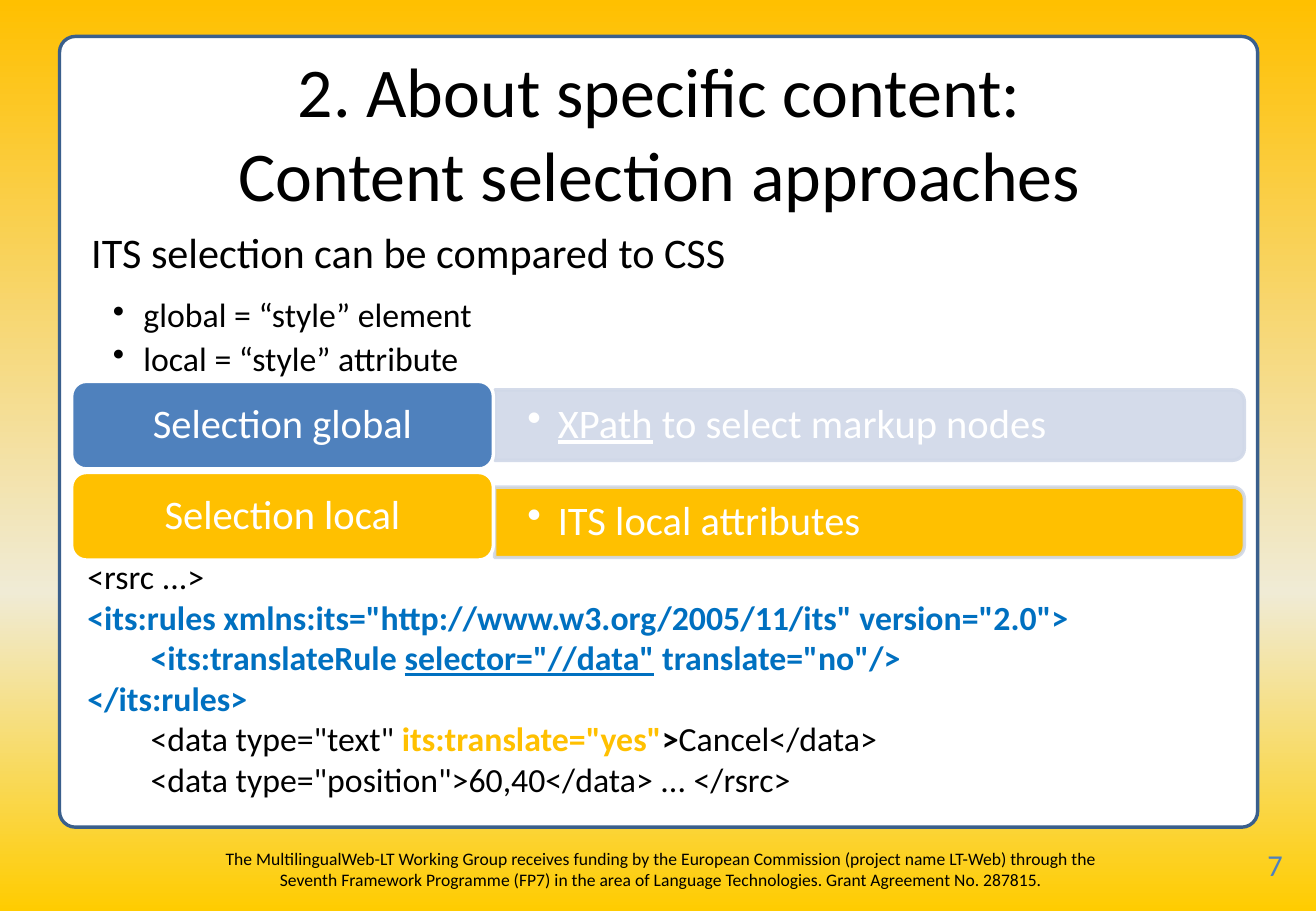
from copy import deepcopy
from dataclasses import dataclass

from pptx import Presentation
from pptx.dml.color import RGBColor
from pptx.enum.shapes import MSO_SHAPE as SHAPE
from pptx.enum.text import MSO_ANCHOR as ANCHOR, MSO_AUTO_SIZE as AUTO_SIZE, PP_ALIGN as ALIGN
from pptx.oxml.ns import qn
from pptx.oxml.xmlchemy import OxmlElement
from pptx.util import Inches, Pt

BLACK, WHITE = "000000", "FFFFFF"
BLUE, GOLD, PALE, CODE_BLUE = "4F81BD", "FFC000", "D0D8E8", "0070C0"


@dataclass
class Run:
    text: str
    color: str = BLACK
    bold: bool = False
    underline: bool = False


@dataclass
class Para:
    runs: list[Run]
    indent: float = 0
    bullet: bool = False
    align: ALIGN = ALIGN.LEFT
    spacing: float | None = None
    after: float = 0


@dataclass
class Row:
    label: str
    label_top: float
    label_fill: str
    bar_mid: float
    bar_fill: str
    bar_alpha: int
    runs: list[Run]


def rgb(color: str) -> RGBColor:
    return RGBColor.from_string(color)


def set_alpha(fill, percent: int) -> None:
    """Make the solid colour of a fill partly transparent."""
    color = fill._xPr.find(qn("a:solidFill"))[0]
    alpha = OxmlElement("a:alpha")
    alpha.set("val", str(percent * 1000))
    color.append(alpha)


def add_box(s, kind: SHAPE, at: tuple, fill: str | None, line: str, width: float):
    sp = s.shapes.add_shape(kind, *map(Inches, at))
    sp.shadow.inherit = False
    if fill:
        sp.fill.solid()
        sp.fill.fore_color.rgb = rgb(fill)
    else:
        sp.fill.background()
    sp.line.color.rgb = rgb(line)
    sp.line.width = Pt(width)
    return sp


def write(sp, paras: list[Para], size: float, anchor: ANCHOR = ANCHOR.TOP,
          inset: tuple = (0.1, 0.05)) -> None:
    tf = sp.text_frame
    tf.word_wrap = True
    tf.auto_size = AUTO_SIZE.NONE
    tf.vertical_anchor = anchor
    tf.margin_left = tf.margin_right = Inches(inset[0])
    tf.margin_top = tf.margin_bottom = Inches(inset[1])
    for i, para in enumerate(paras):
        p = tf.add_paragraph() if i else tf.paragraphs[0]
        p.alignment = para.align
        p.space_before = Pt(0)
        p.space_after = Pt(para.after)
        if para.spacing:
            p.line_spacing = para.spacing
        if para.indent:
            p.level = 1
            pPr = p._p.get_or_add_pPr()
            pPr.set("marL", str(Inches(para.indent)))
            pPr.set("indent", str(-Inches(para.indent) if para.bullet else 0))
            if para.bullet:
                bullet = OxmlElement("a:buChar")
                bullet.set("char", "•")
                pPr.append(bullet)
        for j, run in enumerate(para.runs):
            # Title lines are parted by a line break
            if run.text == "\n":
                p.add_line_break()
                continue
            r = p.add_run()
            r.text = run.text
            r.font.name = "Calibri"
            r.font.size = Pt(size)
            r.font.bold = run.bold
            r.font.underline = run.underline
            r.font.color.rgb = rgb(run.color)


def add_text(s, at: tuple, paras: list[Para], size: float, **layout) -> None:
    write(s.shapes.add_textbox(*map(Inches, at)), paras, size, **layout)


def set_background(s, stops: list[tuple[int, str]]) -> None:
    fill = s.background.fill
    fill.gradient()
    fill.gradient_angle = 270
    gsLst = s.element.find(".//" + qn("a:gsLst"))
    gsLst.append(deepcopy(gsLst[-1]))
    for stop, (position, color) in zip(fill.gradient_stops, stops):
        stop.color.rgb = rgb(color)
        stop.position = position / 100


def bullet(*runs: Run, after: float = 0) -> Para:
    return Para(list(runs), indent=0.25, bullet=True, spacing=0.9, after=after)


def add_row(s, row: Row) -> None:
    """Draw a bar rounded on its right, with its label on the left."""
    left, length, thick = 4.07, 6.17, 0.58
    at = (left + (length - thick) / 2, row.bar_mid - length / 2, thick, length)
    bar = add_box(s, SHAPE.ROUND_2_SAME_RECTANGLE, at, row.bar_fill, PALE, 2)
    bar.rotation = 90
    set_alpha(bar.fill, row.bar_alpha)
    set_alpha(bar.line.fill, 90)
    add_text(s, (left, row.bar_mid - 0.26, 6.15, 0.52), [bullet(*row.runs)], 24,
             anchor=ANCHOR.MIDDLE, inset=(0.27, 0.14))
    label = add_box(s, SHAPE.ROUNDED_RECTANGLE, (0.59, row.label_top, 3.47, 0.72),
                    row.label_fill, WHITE, 2)
    write(label, [Para([Run(row.label, WHITE)], align=ALIGN.CENTER, spacing=0.9)],
          24, ANCHOR.MIDDLE)


ROWS = [
    Row("Selection global", 3.14, BLUE, 3.5, PALE, 90,
        [Run("XPath", WHITE, underline=True), Run(" to select markup nodes", WHITE)]),
    Row("Selection local", 3.89, GOLD, 4.3, GOLD, 100,
        [Run("ITS local attributes", WHITE)]),
]

CODE = [
    Para([Run("<rsrc ...>")]),
    Para([Run('<its:rules xmlns:its="http://www.w3.org/2005/11/its" version="2.0">',
              CODE_BLUE, True)]),
    Para([Run("<its:translateRule ", CODE_BLUE, True),
          Run('selector="//data"', CODE_BLUE, True, True),
          Run(' translate="no"/>', CODE_BLUE, True)], indent=0.52),
    Para([Run("</its:rules>", CODE_BLUE, True)]),
    Para([Run('<data type="text" '), Run('its:translate="yes"', GOLD, True),
          Run(">", bold=True), Run("Cancel</data>")], indent=0.52),
    Para([Run('<data type="position">60,40</data> ... </rsrc>')], indent=0.52),
]

FUNDING = ("The MultilingualWeb-LT Working Group receives funding by the European Commission "
           "(project name LT-Web) through the Seventh Framework Programme (FP7) in the area of "
           "Language Technologies. Grant Agreement No. 287815.")


def main() -> None:
    prs = Presentation()
    prs.slide_width, prs.slide_height = Inches(10.83), Inches(7.5)
    s = prs.slides.add_slide(prs.slide_layouts[5])

    # Background, white panel and footer
    set_background(s, [(0, GOLD), (65, "F0EBD5"), (100, "FFCC00")])
    panel = add_box(s, SHAPE.ROUNDED_RECTANGLE, (0.49, 0.3, 9.86, 6.51), WHITE, "3A5F8C", 2)
    panel.adjustments[0] = 0.02
    add_text(s, (1.62, 6.93, 7.64, 0.4), [Para([Run(FUNDING)], align=ALIGN.CENTER)], 10.4)
    add_text(s, (10.41, 6.96, 0.42, 0.4), [Para([Run("7", BLUE)])], 18, inset=(0.02, 0.01))

    # Title, brought in front of the panel
    title = s.shapes.title
    title.left, title.top, title.width, title.height = map(Inches, (0.51, 0.46, 9.83, 1.25))
    lines = [Run("2. About specific content:"), Run("\n"), Run("Content selection approaches")]
    write(title, [Para(lines, align=ALIGN.CENTER)], 41.4, ANCHOR.MIDDLE)
    s.shapes.element.append(title.element)

    # Code sample
    code = add_box(s, SHAPE.RECTANGLE, (0.62, 4.53, 9.65, 2.12), None, WHITE, 0.75)
    write(code, CODE, 20)

    # Selection rows
    for row in ROWS:
        add_row(s, row)

    # Comparison with CSS
    intro = add_box(s, SHAPE.ROUNDED_RECTANGLE, (0.62, 1.77, 9.62, 0.66), None, WHITE, 2)
    write(intro, [Para([Run("ITS selection can be compared to CSS")], spacing=0.9)], 25,
          ANCHOR.MIDDLE, (0.1, 0.1))
    add_text(s, (0.62, 2.43, 9.62, 0.75),
             [bullet(Run(f"{scope} = “style” {node}"), after=4)
              for scope, node in (("global", "element"), ("local", "attribute"))],
             20, inset=(0.31, 0.03))

    prs.save("out.pptx")


if __name__ == "__main__":
    main()
